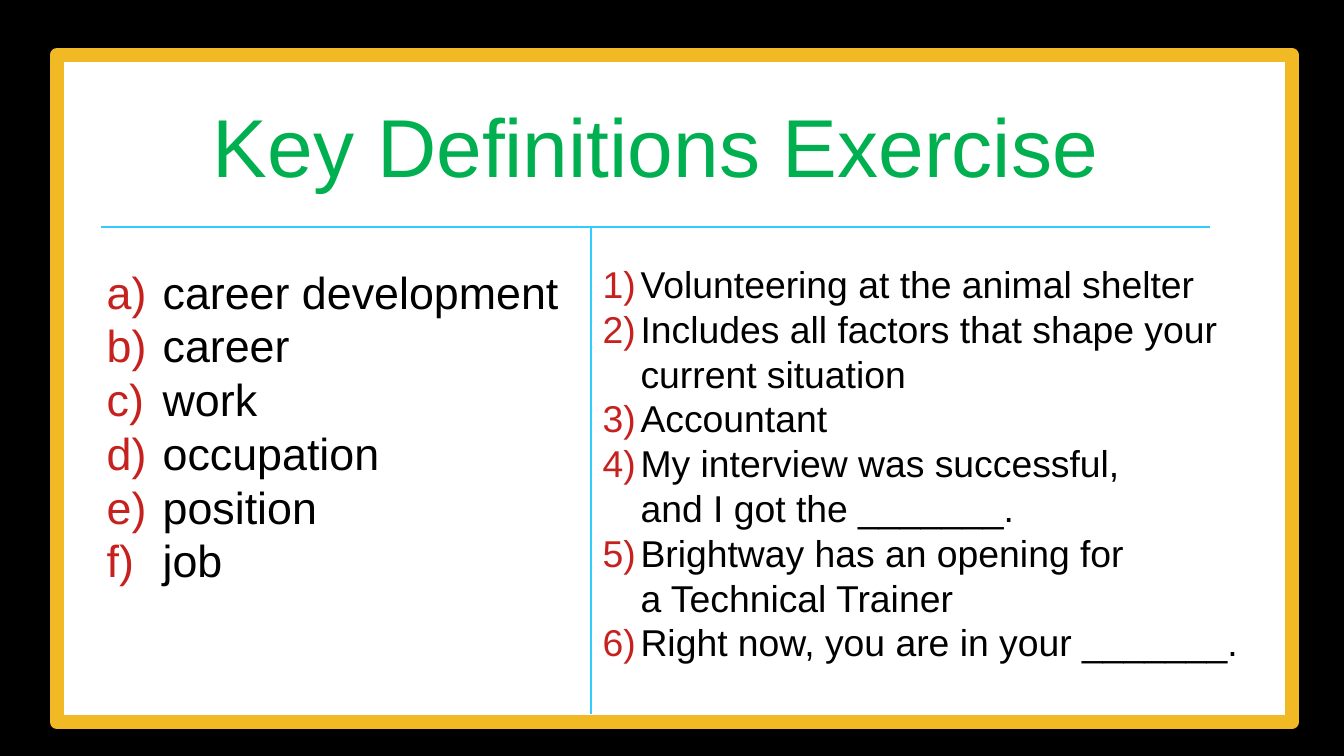
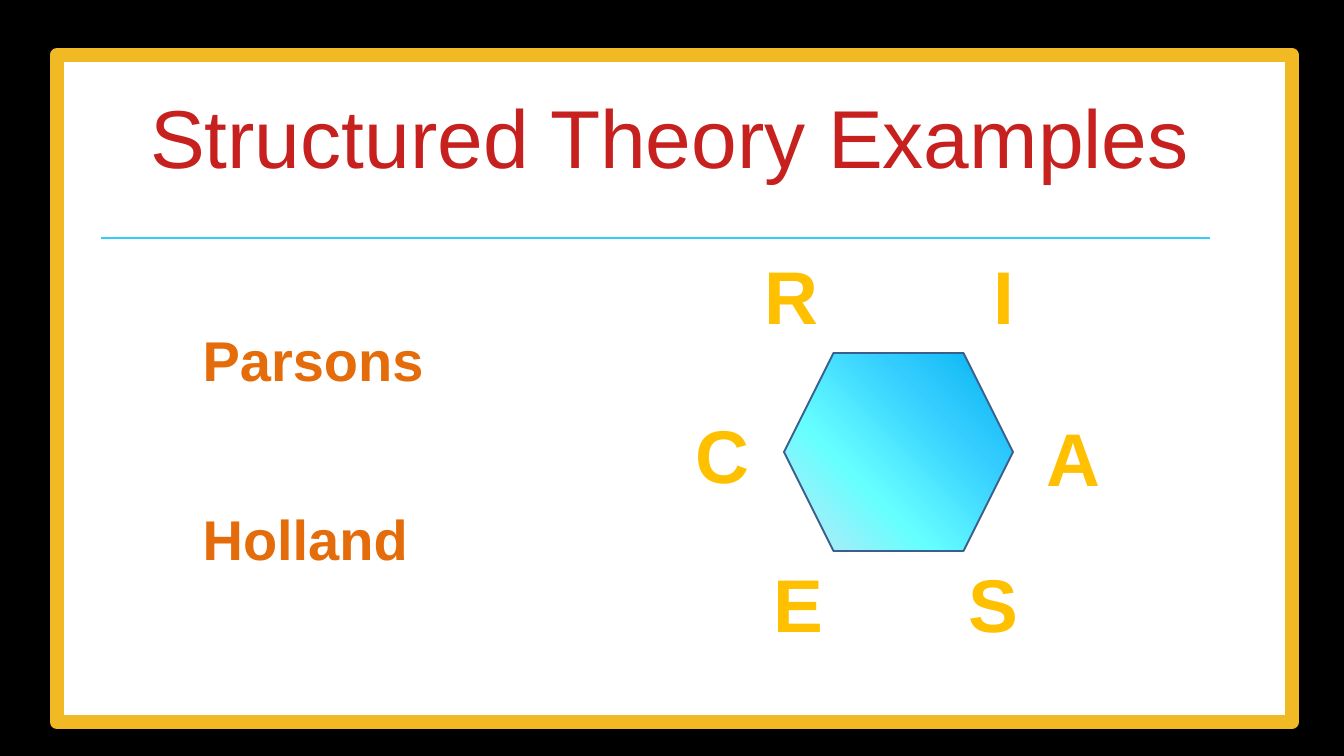
from lxml.etree import SubElement
from pptx import Presentation
from pptx.dml.color import RGBColor
from pptx.enum.shapes import MSO_CONNECTOR, MSO_SHAPE
from pptx.enum.text import PP_ALIGN
from pptx.oxml.ns import qn
from pptx.util import Emu, Pt

PX = 914400 / 67.2
SLIDE_SIZE = (1344, 756)
FONT = "Arial"
LEADING = 1.2

BLACK = RGBColor(0x00, 0x00, 0x00)
WHITE = RGBColor(0xFF, 0xFF, 0xFF)
GOLD = RGBColor(0xF1, 0xB9, 0x23)
SKY = RGBColor(0x33, 0xCC, 0xFF)
GREEN = RGBColor(0x00, 0xB0, 0x50)
RED = RGBColor(0xC6, 0x21, 0x1E)
ORANGE = RGBColor(0xE4, 0x6C, 0x0A)
AMBER = RGBColor(0xFF, 0xC0, 0x00)
NAVY = RGBColor(0x17, 0x37, 0x5E)
STEEL = RGBColor(0x3A, 0x5F, 0x8C)
HEXAGON_STOPS = [
    (2, RGBColor(0xBD, 0xE6, 0xF5)),
    (34, RGBColor(0x66, 0xFF, 0xFF)),
    (70, SKY),
    (100, RGBColor(0x00, 0xB0, 0xF0)),
]

FRAME = (57, 55, 1292, 722)
RULE_LEFT, RULE_RIGHT = 101, 1210
DIVIDER_X, DIVIDER_BOTTOM = 591, 714
HEXAGON = (784, 353, 229, 198)

TERMS = ["career development", "career", "work", "occupation", "position", "job"]
# "\v" is a line break inside a paragraph
DEFINITIONS = [
    "Volunteering at the animal shelter",
    "Includes all factors that shape your current situation",
    "Accountant",
    "My interview was successful,\vand I got the _______.",
    "Brightway has an opening for\va Technical Trainer",
    "Right now, you are in your _______.",
]
THEORISTS = ["Parsons", "Holland"]
LETTERS = [  # letter, left, top, width
    ("R", 758, 247, 77),
    ("I", 987, 247, 71),
    ("A", 1040, 409, 75),
    ("S", 962, 555, 75),
    ("E", 767, 555, 77),
    ("C", 689, 406, 79),
]
LETTER_HEIGHT = 97


def px(*lengths):
    return [Emu(round(length * PX)) for length in lengths]


def add_color(parent, color):
    SubElement(SubElement(parent, qn("a:solidFill")), qn("a:srgbClr"), val=str(color))


def add_numbering(para, scheme, indent):
    properties = para._p.get_or_add_pPr()
    hang = px(indent)[0]
    properties.set("marL", str(hang))
    properties.set("indent", str(-hang))
    SubElement(SubElement(properties, qn("a:buClr")), qn("a:srgbClr"), val=str(RED))
    SubElement(properties, qn("a:buFont"), typeface=FONT)
    SubElement(properties, qn("a:buAutoNum"), type=scheme)


def add_text(page, area, lines, size, color, bold=False, align=PP_ALIGN.LEFT,
             numbering=None, gap=0, outline=None):
    box = page.shapes.add_textbox(*px(*area))
    frame = box.text_frame
    frame.word_wrap = True
    for index, line in enumerate(lines):
        para = frame.add_paragraph() if index else frame.paragraphs[0]
        para.text = line
        if numbering:
            add_numbering(para, *numbering)
        para.alignment = align
        para.line_spacing = Pt(size * LEADING)
        if index and gap:
            para.space_before = Pt(gap)
        for span in para.runs:
            for name, value in {"name": FONT, "size": Pt(size), "bold": bold}.items():
                setattr(span.font, name, value)
            if outline:
                add_color(SubElement(span._r.get_or_add_rPr(), qn("a:ln"), w=str(Pt(1))), outline)
                span._r.rPr.insert(0, span._r.rPr.find(qn("a:ln")))
            span.font.color.rgb = color


def add_line(page, start, end):
    line = page.shapes.add_connector(MSO_CONNECTOR.STRAIGHT, *px(*start, *end))
    line.line.color.rgb = SKY
    line.line.width = Pt(3)
    SubElement(line._element.spPr, qn("a:effectLst"))


def add_frame(page):
    left, top, right, bottom = FRAME
    group = page.shapes.add_group_shape()
    for border in (None, GOLD):
        builder = group.shapes.build_freeform(left, top, scale=PX)
        builder.add_line_segments([(right, top), (right, bottom), (left, bottom)], close=True)
        panel = builder.convert_to_shape()
        panel.shadow.inherit = False
        panel.fill.solid()
        panel.fill.fore_color.rgb = WHITE
        if border:
            panel.line.color.rgb = border
            panel.line.width = Pt(15)
            SubElement(panel.line._get_or_add_ln(), qn("a:round"))
        else:
            panel.line.fill.background()


def add_page(deck, title, title_area, title_color, rule_y):
    page = deck.slides.add_slide(deck.slide_layouts[6])
    page.background.fill.solid()
    page.background.fill.fore_color.rgb = BLACK
    add_frame(page)
    add_line(page, (RULE_LEFT, rule_y), (RULE_RIGHT, rule_y))
    add_text(page, title_area, [title], 88, title_color, align=PP_ALIGN.CENTER)
    return page


def add_hexagon(page):
    hexagon = page.shapes.add_shape(MSO_SHAPE.HEXAGON, *px(*HEXAGON))
    hexagon.shadow.inherit = False
    hexagon.line.color.rgb = STEEL
    hexagon.line.width = Pt(2)
    hexagon.fill.gradient()
    hexagon.fill.gradient_angle = 45
    stops = hexagon._element.spPr.find(qn("a:gradFill")).find(qn("a:gsLst"))
    for stop in list(stops):
        stops.remove(stop)
    for percent, color in HEXAGON_STOPS:
        stop = SubElement(stops, qn("a:gs"), pos=str(percent * 1000))
        SubElement(stop, qn("a:srgbClr"), val=str(color))


def add_definitions_page(deck):
    rule_y = 227
    page = add_page(deck, "Key Definitions Exercise", (101, 92, 1109, 140), GREEN, rule_y)
    add_text(page, (100, 261, 491, 364), TERMS, 48, BLACK,
             numbering=("alphaLcParenR", 56))
    add_text(page, (596, 258, 691, 414), DEFINITIONS, 40, BLACK,
             numbering=("arabicParenR", 38))
    add_line(page, (DIVIDER_X, rule_y), (DIVIDER_X, DIVIDER_BOTTOM))


def add_theory_page(deck):
    page = add_page(deck, "Structured Theory Examples", (101, 83, 1137, 136), RED, 238)
    add_text(page, (196, 322, 474, 343), THEORISTS, 60, ORANGE, bold=True, gap=120)
    add_hexagon(page)
    for letter, left, top, width in LETTERS:
        add_text(page, (left, top, width, LETTER_HEIGHT), [letter], 80, AMBER,
                 bold=True, outline=NAVY)


def main():
    deck = Presentation()
    deck.slide_width, deck.slide_height = px(*SLIDE_SIZE)
    add_definitions_page(deck)
    add_theory_page(deck)
    deck.save("out.pptx")


if __name__ == "__main__":
    main()
